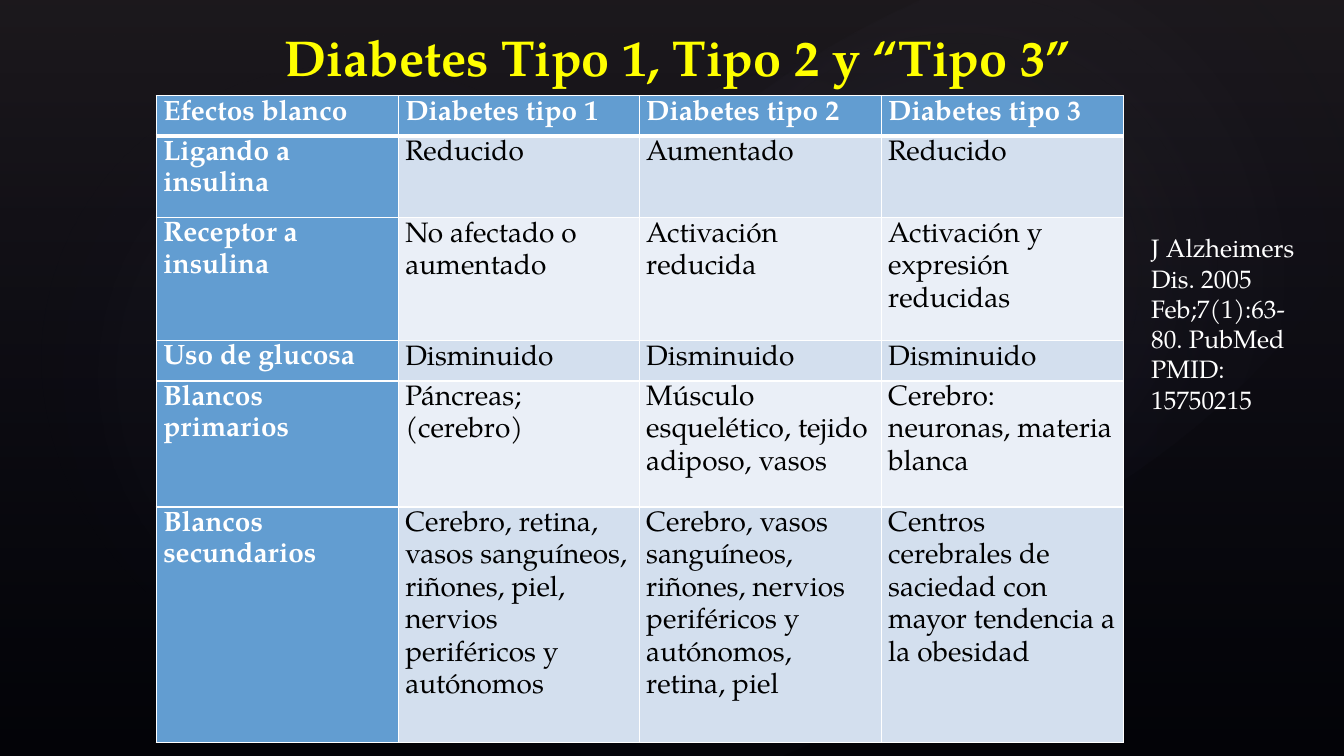
import pptx
import pptx.util
import pptx.dml.color
import pptx.enum.shapes
import pptx.enum.text
import pptx.oxml
from pptx.oxml import ns

W, H = 13.33, 7.5
FONT = "TeX Gyre Pagella"
C = {
    "back": "000000", "veil": "504652", "navy": "242852", "glow": "C4BCC6",
    "title": "FFFF00", "white": "FFFFFF", "text": "000000",
    "head": "629DD1", "odd": "D3DFEE", "even": "EAEFF7",
}
COLS = [2.4, 2.39, 2.4, 2.4]
ROWS = [0.4, 0.81, 1.22, 0.4, 1.25, 2.34]
DATA = [
    ["Efectos blanco", "Diabetes tipo 1", "Diabetes tipo 2", "Diabetes tipo 3"],
    ["Ligando a insulina", "Reducido", "Aumentado", "Reducido"],
    ["Receptor a insulina", "No afectado o aumentado", "Activación reducida",
     "Activación y expresión reducidas"],
    ["Uso de glucosa", "Disminuido", "Disminuido", "Disminuido"],
    ["Blancos primarios", "Páncreas; (cerebro)",
     "Músculo esquelético, tejido adiposo, vasos",
     "Cerebro: neuronas, materia blanca"],
    ["Blancos secundarios",
     "Cerebro, retina, vasos sanguíneos, riñones, piel, nervios periféricos y autónomos",
     "Cerebro, vasos sanguíneos, riñones, nervios periféricos y autónomos, retina, piel",
     "Centros cerebrales de saciedad con mayor tendencia a la obesidad"],
]


def rgb(name):
    return pptx.dml.color.RGBColor.from_string(C[name])


def inches(box):
    return [pptx.util.Inches(v) for v in box]


def add_run(p, text, size, color, bold=False):
    r = p.add_run()
    r.text = text
    r.font.name = FONT
    r.font.size = pptx.util.Pt(size)
    r.font.bold = bold
    r.font.color.rgb = rgb(color)


def add_gradient(s, kind, box, stops, direction, rotation=0):
    sp = s.shapes.add_shape(kind, *inches(box))
    sp.shadow.inherit = False
    sp.rotation = rotation
    sp.line.fill.background()
    sp.fill.background()
    stop_xml = "".join(
        f'<a:gs pos="{pos * 1000}"><a:srgbClr val="{C[color]}">'
        f'<a:alpha val="{alpha * 1000}"/></a:srgbClr></a:gs>'
        for pos, color, alpha in stops)
    grad = pptx.oxml.parse_xml(
        f'<a:gradFill {ns.nsdecls("a")} rotWithShape="1">'
        f'<a:gsLst>{stop_xml}</a:gsLst>{direction}</a:gradFill>')
    props = sp._element.spPr
    props.replace(props.find(ns.qn("a:noFill")), grad)


def add_backdrop(s, box):
    s.background.fill.solid()
    s.background.fill.fore_color.rgb = rgb("back")
    shapes = pptx.enum.shapes.MSO_SHAPE
    add_gradient(s, shapes.RECTANGLE, box, [(0, "veil", 36), (100, "navy", 10)],
                 '<a:lin ang="5400000" scaled="0"/>')
    x, y, w, h = box
    center = ('<a:path path="circle"><a:fillToRect l="50000" t="50000" '
              'r="50000" b="50000"/></a:path>')
    for left, top, width, height, turn, alpha in [
            (0.15, 0.152, 0.792, 0.832, 328.7, 7),
            (0.046, 0.061, 0.455, 0.871, 294.3, 8),
            (0.359, 0.017, 0.709, 0.693, 328.7, 8)]:
        add_gradient(s, shapes.OVAL,
                     (x + left * w, y + top * h, width * w, height * h),
                     [(0, "glow", alpha), (58, "navy", 0)], center, turn)


def add_text(s, box, text, size, color, bold=False, align="LEFT", anchor="TOP"):
    tf = s.shapes.add_textbox(*inches(box)).text_frame
    tf.word_wrap = True
    tf.vertical_anchor = getattr(pptx.enum.text.MSO_ANCHOR, anchor)
    p = tf.paragraphs[0]
    p.alignment = getattr(pptx.enum.text.PP_ALIGN, align)
    add_run(p, text, size, color, bold)


def set_borders(cell, bottom):
    props = cell._tc.get_or_add_tcPr()
    for i, (side, width) in enumerate([("L", 1), ("R", 1), ("T", 1), ("B", bottom)]):
        props.insert(i, pptx.oxml.parse_xml(
            f'<a:ln{side} {ns.nsdecls("a")} w="{width * 12700}"><a:solidFill>'
            f'<a:srgbClr val="{C["white"]}"/></a:solidFill></a:ln{side}>'))


def fill_cell(cell, text, row, col):
    label = row == 0 or col == 0
    cell.margin_left = cell.margin_right = pptx.util.Inches(0.07)
    cell.margin_top = cell.margin_bottom = 0
    cell.fill.solid()
    cell.fill.fore_color.rgb = rgb("head" if label else "odd" if row % 2 else "even")
    set_borders(cell, 1 if row else 3)
    p = cell.text_frame.paragraphs[0]
    p.line_spacing = 1.15
    add_run(p, text, 20, "white" if label else "text", label)


def add_comparison(s, box):
    x, y, w, h = box
    table = s.shapes.add_table(len(ROWS), len(COLS), *inches(box)).table
    for column, width in zip(table.columns, COLS):
        column.width = pptx.util.Inches(w * width / sum(COLS))
    for row, height in zip(table.rows, ROWS):
        row.height = pptx.util.Inches(h * height / sum(ROWS))
    for i, texts in enumerate(DATA):
        for j, text in enumerate(texts):
            fill_cell(table.cell(i, j), text, i, j)


def main():
    prs = pptx.Presentation()
    prs.slide_width, prs.slide_height = inches((W, H))
    s = prs.slides.add_slide(prs.slide_layouts[6])
    add_backdrop(s, (0, 0, W, H))
    add_text(s, (0.93, -0.01, 11.58, 0.92), "Diabetes Tipo 1, Tipo 2 y “Tipo 3”",
             36, "title", True, "CENTER", "BOTTOM")
    add_comparison(s, (1.55, 0.95, 9.59, 6.42))
    add_text(s, (11.32, 2.26, 1.7, 1.92),
             "J Alzheimers Dis. 2005 Feb;7(1):63-80. PubMed PMID: 15750215",
             18, "white")
    prs.save("out.pptx")


if __name__ == "__main__":
    main()
